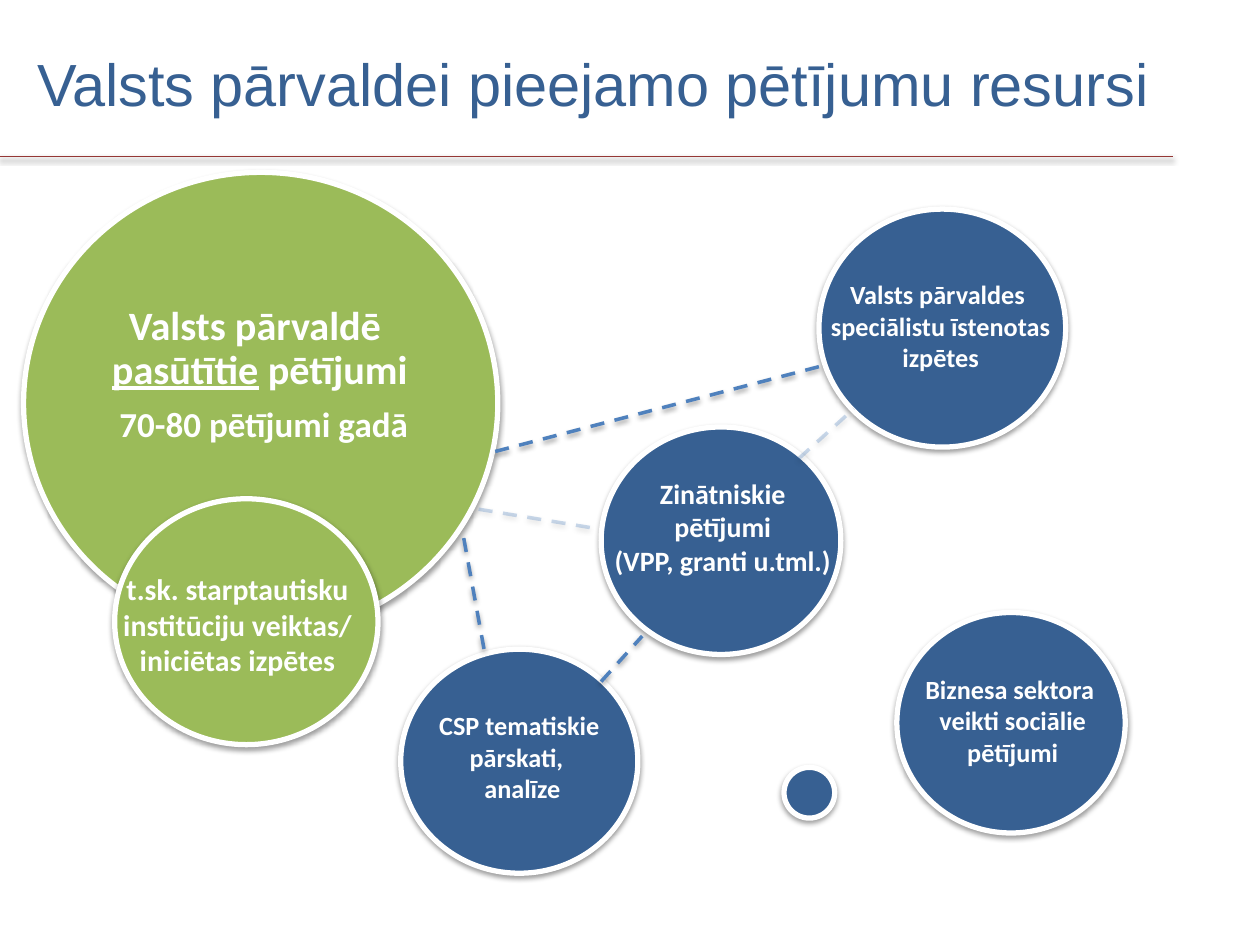
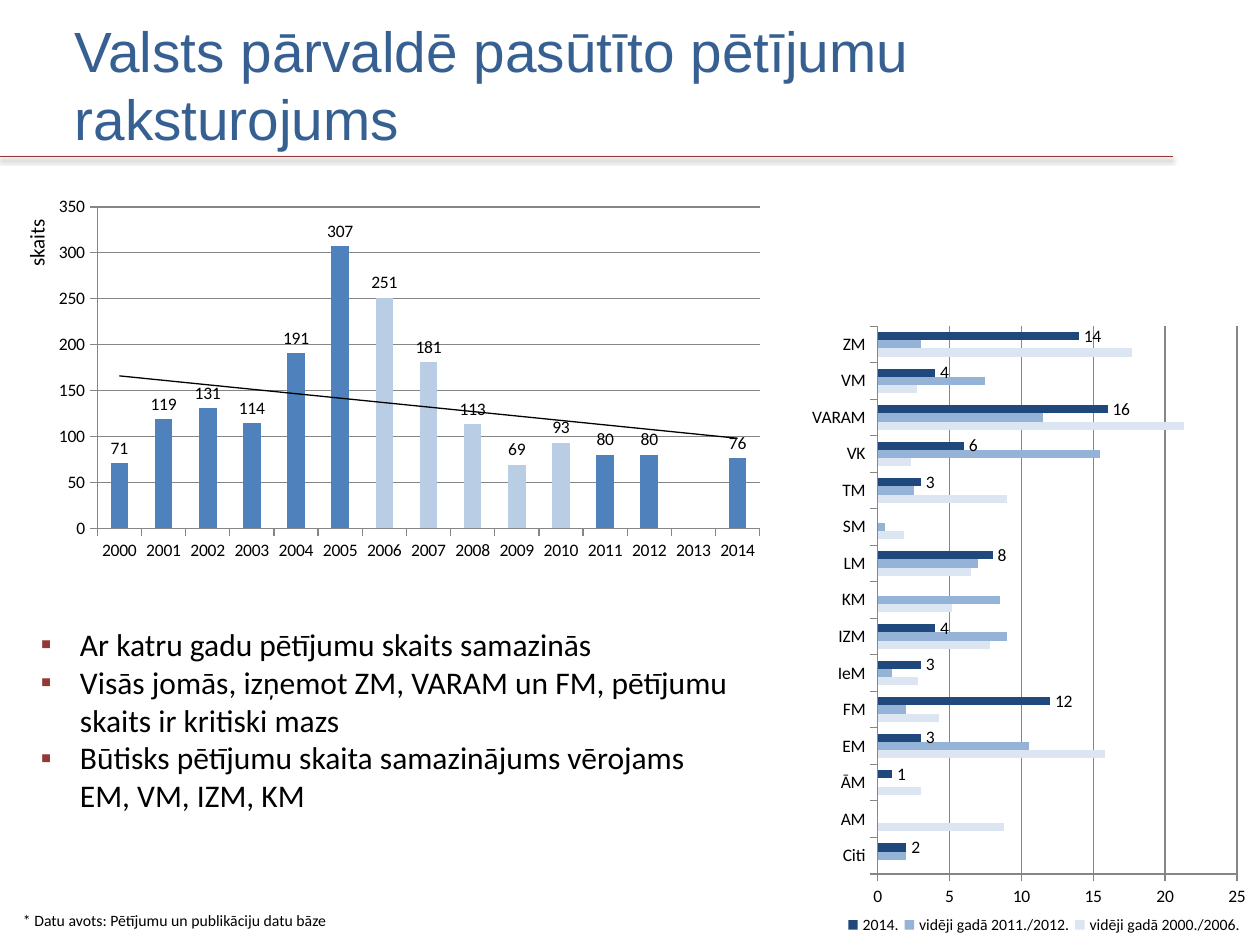
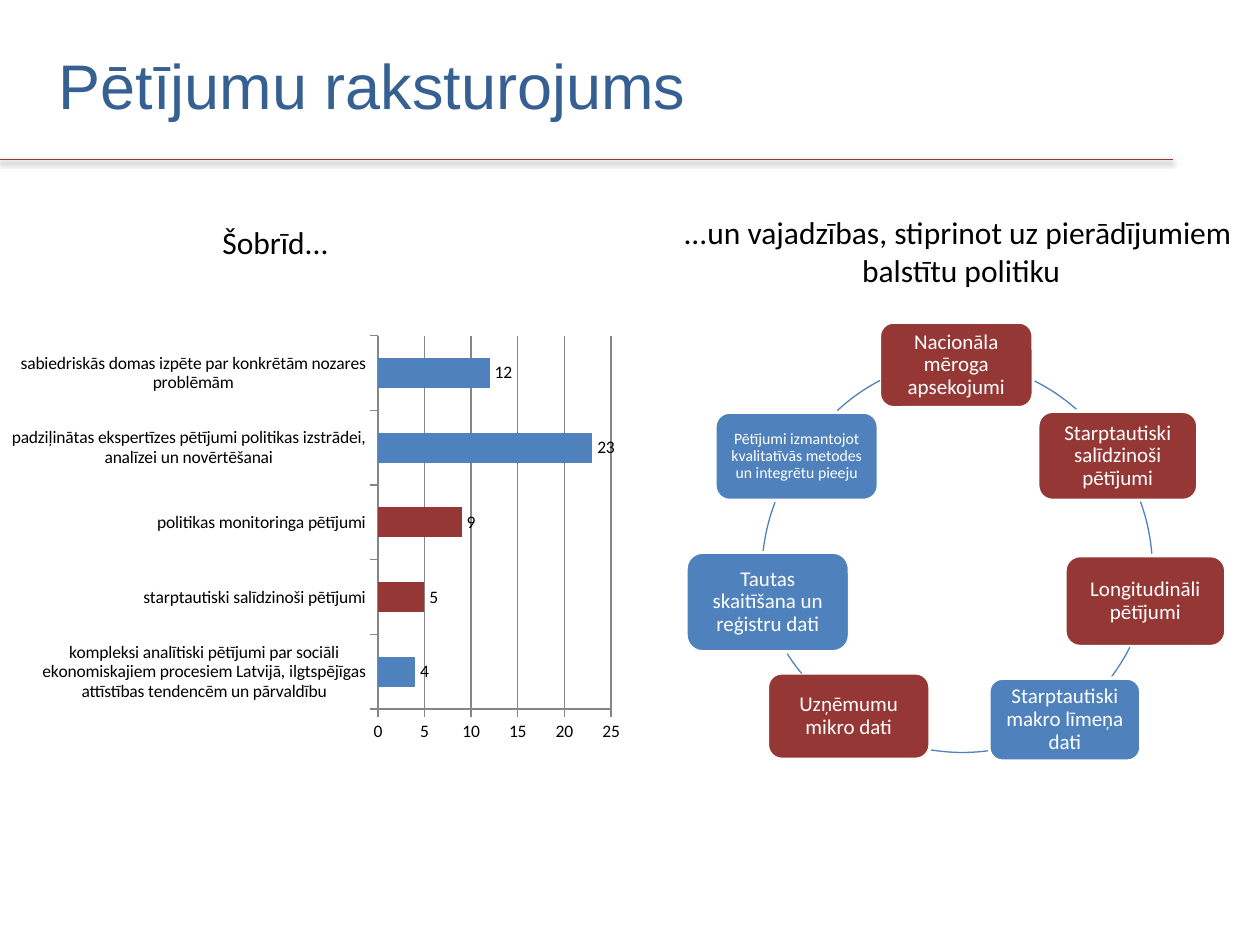
"""Build three slides on research commissioned by public administration."""
from dataclasses import dataclass

from pptx import Presentation
from pptx.chart.data import CategoryChartData
from pptx.dml.color import RGBColor
from pptx.enum.chart import XL_CHART_TYPE, XL_LABEL_POSITION, XL_LEGEND_POSITION, XL_TICK_MARK
from pptx.enum.dml import MSO_LINE
from pptx.enum.shapes import MSO_CONNECTOR, MSO_SHAPE
from pptx.enum.text import MSO_ANCHOR, MSO_AUTO_SIZE, PP_ALIGN
from pptx.oxml import parse_xml
from pptx.oxml.ns import nsdecls, qn
from pptx.util import Pt

COLUMNS, BARS = XL_CHART_TYPE.COLUMN_CLUSTERED, XL_CHART_TYPE.BAR_CLUSTERED
OUTSIDE_END = XL_LABEL_POSITION.OUTSIDE_END
LEGEND_RIGHT = XL_LEGEND_POSITION.RIGHT
TICK_OUT = XL_TICK_MARK.OUTSIDE
DASH = MSO_LINE.DASH
STRAIGHT = MSO_CONNECTOR.STRAIGHT
ELLIPSE, ROUNDED, ARC = MSO_SHAPE.OVAL, MSO_SHAPE.ROUNDED_RECTANGLE, MSO_SHAPE.ARC
LEFT, CENTER = PP_ALIGN.LEFT, PP_ALIGN.CENTER
TOP, MIDDLE = MSO_ANCHOR.TOP, MSO_ANCHOR.MIDDLE
NO_FIT = MSO_AUTO_SIZE.NONE
TITLE_ONLY, TITLE_AND_BODY = 5, 1


@dataclass(frozen=True)
class Theme:
    """Colours, fonts and type sizes used on every slide."""
    navy: str = "376092"
    blue: str = "4F81BD"
    light_blue: str = "B9CDE5"
    pale_blue: str = "DCE6F2"
    mid_blue: str = "95B3D7"
    deep_blue: str = "1F497D"
    green: str = "9BBB59"
    red: str = "953735"
    grid: str = "868686"
    white: str = "FFFFFF"
    black: str = "000000"
    title_font: str = "Arial"
    text_font: str = "Calibri"
    body_size: float = 18
    axis_title_size: float = 12
    chart_size: float = 10
    small_size: float = 9


THEME = Theme()


@dataclass(frozen=True)
class Box:
    """A rectangle in points."""
    left: float
    top: float
    width: float
    height: float

    def inner(self, left, top, width, height):
        """Return a box placed relative to this one."""
        return Box(self.left + left, self.top + top, width, height)

    def frame(self):
        """Return the four lengths for a python-pptx call."""
        return Pt(self.left), Pt(self.top), Pt(self.width), Pt(self.height)


def rgb(code):
    """Turn a hex code into a colour."""
    return RGBColor.from_string(code)


def add_span(para, text, size, color=THEME.black, font=THEME.text_font, bold=False):
    """Add one formatted run and return it."""
    span = para.add_run()
    span.text = text
    span.font.size = Pt(size)
    span.font.name = font
    span.font.bold = bold
    span.font.color.rgb = rgb(color)
    return span


def add_para(text_frame, lines, size, align=LEFT, **style):
    """Add a paragraph whose lines are split by line breaks."""
    para = text_frame.paragraphs[0]
    if para.runs:
        para = text_frame.add_paragraph()
    para.alignment = align
    for index, line in enumerate(lines.split("\n")):
        if index:
            para.add_line_break()
        add_span(para, line, size, **style)
    return para


def add_text(page, box, paras, size, align=LEFT, wrap=True, anchor=TOP, **style):
    """Add a text box with one paragraph per item."""
    text_box = page.shapes.add_textbox(*box.frame())
    text_frame = text_box.text_frame
    text_frame.word_wrap = wrap
    text_frame.vertical_anchor = anchor
    for lines in paras:
        add_para(text_frame, lines, size, align, **style)
    return text_box


def set_shadow(shape):
    """Give a shape the soft shadow that falls straight down."""
    properties = shape._element.spPr
    for old in properties.findall(qn("a:effectLst")):
        properties.remove(old)
    properties.append(parse_xml(
        f'<a:effectLst {nsdecls("a")}><a:outerShdw blurRad="{Pt(3.1)}" dist="{Pt(1.6)}" '
        'dir="5400000" rotWithShape="0"><a:srgbClr val="000000"><a:alpha val="38000"/>'
        '</a:srgbClr></a:outerShdw></a:effectLst>'))


def add_shape(page, kind, box, fill, line, line_width):
    """Add a preset shape with plain fill and line."""
    shape = page.shapes.add_shape(kind, *box.frame())
    shape.shadow.inherit = False
    if fill:
        shape.fill.solid()
        shape.fill.fore_color.rgb = rgb(fill)
    else:
        shape.fill.background()
    shape.line.color.rgb = rgb(line)
    shape.line.width = Pt(line_width)
    return shape


def add_line(page, start, end, color, width):
    """Add a straight line with a shadow."""
    line = page.shapes.add_connector(STRAIGHT, *(Pt(value) for value in (*start, *end)))
    line.line.color.rgb = rgb(color)
    line.line.width = Pt(width)
    set_shadow(line)
    return line


def add_page(deck, layout, title, box, size, rule_top=89.5):
    """Add a slide with its title and the rule below it."""
    page = deck.slides.add_slide(deck.slide_layouts[layout])
    heading = page.shapes.title
    heading.left, heading.top, heading.width, heading.height = box.frame()
    heading.text_frame.auto_size = NO_FIT
    heading.text_frame.vertical_anchor = MIDDLE
    add_para(heading.text_frame, title, size, color=THEME.navy, font=THEME.title_font)
    add_line(page, (0, rule_top), (670.5, rule_top), THEME.red, 0.75)
    return page


def add_circle(page, box, fill):
    """Add a circle with a white rim."""
    circle = add_shape(page, ELLIPSE, box, fill, THEME.white, 3)
    set_shadow(circle)


def add_commissioned_circle(page, box):
    """Add the large circle of commissioned studies and its text."""
    add_circle(page, box, THEME.green)
    style = {"color": THEME.white, "bold": True}
    text_box = add_text(page, box.inner(39, 44, 192, 144), ["Valsts pārvaldē \n"], 23,
                        CENTER, anchor=MIDDLE, **style)
    first = text_box.text_frame.paragraphs[0]
    add_span(first, "pasūtītie", 23, **style).font.underline = True
    add_span(first, " pētījumi", 23, **style)
    second = add_para(text_box.text_frame, " 70-80 pētījumi gadā", 20, CENTER, **style)
    for para in (first, second):
        para.line_spacing = 0.9
    first.space_after = Pt(8)


def add_source_circle(page, box, fill, label, paras, size):
    """Add a circle of one research source with a label relative to it."""
    add_circle(page, box, fill)
    add_text(page, box.inner(*label), paras, size, CENTER, color=THEME.white, bold=True)


def add_link(page, start, end, faint):
    """Add a dashed link between two circles."""
    link = add_line(page, start, end, THEME.blue, 2)
    link.line.dash_style = DASH
    if faint:
        color = link._element.spPr.find(".//" + qn("a:ln")).find(".//" + qn("a:srgbClr"))
        color.append(parse_xml(f'<a:alpha {nsdecls("a")} val="30000"/>'))


def set_layout(parent, index, fractions, target=""):
    """Fix the place of a chart part as fractions of the chart."""
    for old in parent.findall(qn("c:layout")):
        parent.remove(old)
    modes = "".join(f'<c:{key}Mode val="edge"/>' for key in "xy")
    sizes = "".join(f'<c:{key} val="{value}"/>' for key, value in zip("xywh", fractions))
    parent.insert(index, parse_xml(
        f'<c:layout {nsdecls("c")}><c:manualLayout>{target}{modes}{sizes}'
        '</c:manualLayout></c:layout>'))


def add_bar_chart(page, box, kind, categories, series_rows, plot_area, top_value, step):
    """Add a clustered chart; each series row is name, values, colour, labelled."""
    data = CategoryChartData()
    data.categories = categories
    for name, values, _, _ in series_rows:
        data.add_series(name, values)
    chart = page.shapes.add_chart(kind, *box.frame(), data).chart
    chart.has_title = False
    chart.has_legend = False
    chart.font.size = Pt(THEME.chart_size)
    chart.font.name = THEME.text_font
    chart.font.color.rgb = rgb(THEME.black)
    plot = chart.plots[0]
    plot.gap_width = 150
    plot.overlap = 0
    plot.vary_by_categories = False
    for series, (_, _, color, labelled) in zip(plot.series, series_rows):
        series.invert_if_negative = False
        series.format.fill.solid()
        series.format.fill.fore_color.rgb = rgb(color)
        if labelled:
            series.data_labels.show_value = True
            series.data_labels.position = OUTSIDE_END
    for axis in (chart.category_axis, chart.value_axis):
        axis.major_tick_mark = TICK_OUT
        axis.format.line.color.rgb = rgb(THEME.grid)
    chart.category_axis.has_major_gridlines = False
    values = chart.value_axis
    values.major_gridlines.format.line.color.rgb = rgb(THEME.grid)
    values.minimum_scale, values.maximum_scale, values.major_unit = 0, top_value, step
    set_layout(chart.element.find(".//" + qn("c:plotArea")), 0, plot_area,
               '<c:layoutTarget val="inner"/>')
    return chart


def color_points(chart, indexes, color):
    """Recolour single bars of the first series."""
    points = chart.plots[0].series[0].points
    for index in indexes:
        fill = points[index].format.fill
        fill.solid()
        fill.fore_color.rgb = rgb(color)


def add_yearly_chart(page, box):
    """Add the studies per year with a linear trend."""
    counts = [71, 119, 131, 114, 191, 307, 251, 181, 113, 69, 93, 80, 80, None, 76]
    years = [str(year) for year in range(2000, 2015)]
    chart = add_bar_chart(page, box, COLUMNS, years, [("Skaits", counts, THEME.blue, True)],
                          (0.07, 0.05, 0.91, 0.85), 350, 50)
    color_points(chart, range(6, 11), THEME.light_blue)
    chart.element.find(".//" + qn("c:cat")).addprevious(parse_xml(
        f'<c:trendline {nsdecls("c", "a")}><c:spPr><a:ln w="{Pt(0.75)}"><a:solidFill>'
        f'<a:srgbClr val="{THEME.black}"/></a:solidFill></a:ln></c:spPr>'
        '<c:trendlineType val="linear"/><c:dispRSqr val="0"/><c:dispEq val="0"/>'
        '</c:trendline>'))
    label = add_text(page, box.inner(-32, 15, 52.5, 21.5), ["skaits"], THEME.axis_title_size)
    label.rotation = 270


def add_ministry_chart(page, box):
    """Add the studies per ministry in three periods."""
    ministries = ["Citi", "AM", "ĀM", "EM", "FM", "IeM", "IZM", "KM", "LM", "SM", "TM",
                  "VK", "VARAM", "VM", "ZM"]
    rows = [
        ("vidēji gadā 2000./2006.", [None, 8.8, 3, 15.8, 4.3, 2.8, 7.8, 5.2, 6.5, 1.8, 9,
                                     2.3, 21.3, 2.7, 17.7], THEME.pale_blue, False),
        ("vidēji gadā 2011./2012.", [2, 0, 0, 10.5, 2, 1, 9, 8.5, 7, 0.5, 2.5, 15.5,
                                     11.5, 7.5, 3], THEME.mid_blue, False),
        ("2014.", [2, None, 1, 3, 12, 3, 4, None, 8, None, 3, 6, 16, 4, 14],
         THEME.deep_blue, True),
    ]
    chart = add_bar_chart(page, box, BARS, ministries, rows,
                          (0.16, 0.03, 0.81, 0.86), 25, 5)
    chart.has_legend = True
    chart.legend.position = LEGEND_RIGHT
    chart.legend.include_in_layout = False
    chart.legend.font.size = Pt(THEME.small_size)
    set_layout(chart.element.find(".//" + qn("c:legend")), 1, (0.08, 0.95, 0.91, 0.04))


def add_findings(page, box, findings):
    """Fill the body placeholder with square bullets."""
    body = page.placeholders[1]
    body.left, body.top, body.width, body.height = box.frame()
    body.text_frame.auto_size = NO_FIT
    for finding in findings:
        para = add_para(body.text_frame, finding, THEME.body_size)
        para.space_before = Pt(0)
        properties = para._p.get_or_add_pPr()
        properties.set("marL", str(Pt(22.5)))
        properties.set("indent", str(Pt(-22.5)))
        for tag in (f'buClr {nsdecls("a")}><a:srgbClr val="{THEME.red}"/></a:buClr',
                    f'buFont {nsdecls("a")} typeface="{THEME.title_font}"/',
                    f'buChar {nsdecls("a")} char="▪"/'):
            properties.append(parse_xml(f"<a:{tag}>"))


def add_type_chart(page, box):
    """Add the number of studies of each type."""
    kinds = [
        "kompleksi analītiski pētījumi par sociāli ekonomiskajiem procesiem Latvijā, "
        "ilgtspējīgas attīstības tendencēm un pārvaldību",
        "starptautiski salīdzinoši pētījumi",
        "politikas monitoringa pētījumi",
        "padziļinātas ekspertīzes pētījumi politikas izstrādei, analīzei un novērtēšanai",
        "sabiedriskās domas izpēte par konkrētām nozares problēmām",
    ]
    chart = add_bar_chart(page, box, BARS, kinds,
                          [("Skaits", [4, 5, 9, 23, 12], THEME.blue, True)],
                          (0.6, 0.02, 0.37, 0.88), 25, 5)
    color_points(chart, (1, 2), THEME.red)


def add_needs_ring(page, box):
    """Add the ring of needs: each node with the arc that follows it."""
    nodes = [
        ("Nacionāla mēroga apsekojumi", (110.5, 0, 88, 49), THEME.red, 12,
         (38.5, 22, 296.6, 311.8)),
        ("Starptautiski salīdzinoši pētījumi", (201, 51, 91.5, 51), THEME.red, 12,
         (44.5, 30, 339.8, 356.3)),
        ("Longitudināli pētījumi", (216.5, 133.5, 92, 52), THEME.red, 12,
         (43.5, 25, 26.7, 37.3)),
        ("Starptautiski makro līmeņa dati", (173, 203.5, 87, 47.5), THEME.blue, 12,
         (47, 24, 82.5, 99.8)),
        ("Uzņēmumu mikro dati", (46.5, 200.5, 93, 49.5), THEME.red, 12,
         (40.5, 19, 140.3, 148.3)),
        ("Tautas skaitīšana un reģistru dati", (0, 131.5, 93.5, 57), THEME.blue, 12,
         (43.5, 32, 186.3, 201.7)),
        ("Pētījumi izmantojot kvalitatīvās metodes un integrētu pieeju",
         (16.5, 51.5, 93.5, 50.5), THEME.blue, 9, (51, 21, 227.1, 242.6)),
    ]
    diameter = 222
    for text, place, fill, size, (left, top, start, end) in nodes:
        node = add_shape(page, ROUNDED, box.inner(*place), fill, THEME.white, 2)
        text_frame = node.text_frame
        text_frame.word_wrap = True
        text_frame.vertical_anchor = MIDDLE
        text_frame.margin_left = text_frame.margin_right = Pt(6)
        text_frame.margin_top = text_frame.margin_bottom = Pt(3)
        para = add_para(text_frame, text, size, CENTER, color=THEME.white)
        para.line_spacing = 0.9
        arc = add_shape(page, ARC, box.inner(left, top, diameter, diameter), None,
                        THEME.blue, 0.75)
        arc.adjustments[0], arc.adjustments[1] = start * 0.6, end * 0.6


def build_resources(deck):
    """Build the slide of research sources."""
    page = add_page(deck, TITLE_ONLY, "Valsts pārvaldei pieejamo pētījumu resursi",
                    Box(14, 2, 686, 90), 34)
    add_commissioned_circle(page, Box(13.5, 98.5, 271, 264))
    sources = [
        (Box(468, 119.5, 141, 136), THEME.navy, (-11.5, 36, 162, 94),
         ["Valsts pārvaldes ", "speciālistu īstenotas", "izpētes"], 15),
        (Box(512.5, 350, 130.5, 126), THEME.navy, (-10, 31, 152.5, 62),
         ["Biznesa sektora \nveikti sociālie pētījumi"], 15),
        (Box(65.5, 285, 150.5, 140.5), THEME.green, (-6, 37.5, 152.5, 69),
         ["t.sk. starptautisku institūciju veiktas/ iniciētas izpētes"], 17),
        (Box(343.5, 244, 137, 130), THEME.navy, (-3, 24.5, 145, 65.5),
         ["Zinātniskie", "pētījumi", "(VPP, granti u.tml.)"], 16),
        (Box(229, 371, 135.5, 128), THEME.navy, (0, 31, 139, 70.5),
         ["CSP tematiskie \npārskati,  ", "analīze"], 15),
    ]
    for source in sources:
        add_source_circle(page, *source)
    add_circle(page, Box(448, 438.5, 29, 29), THEME.navy)
    links = [
        ((265, 307.5), (277, 373), False),
        ((273.5, 291), (337.5, 301.5), True),
        ((283, 258), (470, 209), False),
        ((343.5, 389.5), (367, 363.5), False),
        ((456.5, 262), (488, 233.5), True),
    ]
    for link in links:
        add_link(page, *link)


def build_profile(deck):
    """Build the slide of counts per year and ministry."""
    page = add_page(deck, TITLE_AND_BODY, "Valsts pārvaldē pasūtīto pētījumu raksturojums",
                    Box(35.5, 3, 679, 90), 32.4)
    add_yearly_chart(page, Box(26.5, 107.5, 416, 216))
    add_ministry_chart(page, Box(461, 175.5, 253.5, 364))
    add_findings(page, Box(16, 353.5, 411, 117), [
        "Ar katru gadu pētījumu skaits samazinās",
        "Visās jomās, izņemot ZM, VARAM un FM, pētījumu skaits ir kritiski mazs",
        "Būtisks pētījumu skaita samazinājums vērojams EM, VM, IZM, KM",
    ])
    add_text(page, Box(6, 517, 190, 18), ["* Datu avots: Pētījumu un publikāciju datu bāze"],
             THEME.small_size, wrap=False)


def build_needs(deck):
    """Build the slide of present studies and needs."""
    page = add_page(deck, TITLE_ONLY, "Pētījumu raksturojums", Box(26.5, 3, 648, 90), 36,
                    rule_top=91)
    add_type_chart(page, Box(0, 187, 360, 242.5))
    add_text(page, Box(120, 124, 87, 29), ["Šobrīd..."], THEME.body_size)
    add_needs_ring(page, Box(392, 184, 309, 252))
    add_text(page, Box(381.5, 118, 335.5, 51),
             ["...un vajadzības, stiprinot uz pierādījumiem ", "balstītu politiku"],
             THEME.body_size, CENTER, wrap=False)


def main():
    """Build the deck and save it."""
    deck = Presentation()
    deck.slide_width, deck.slide_height = Pt(720), Pt(540)
    build_resources(deck)
    build_profile(deck)
    build_needs(deck)
    deck.save("out.pptx")


if __name__ == "__main__":
    main()
